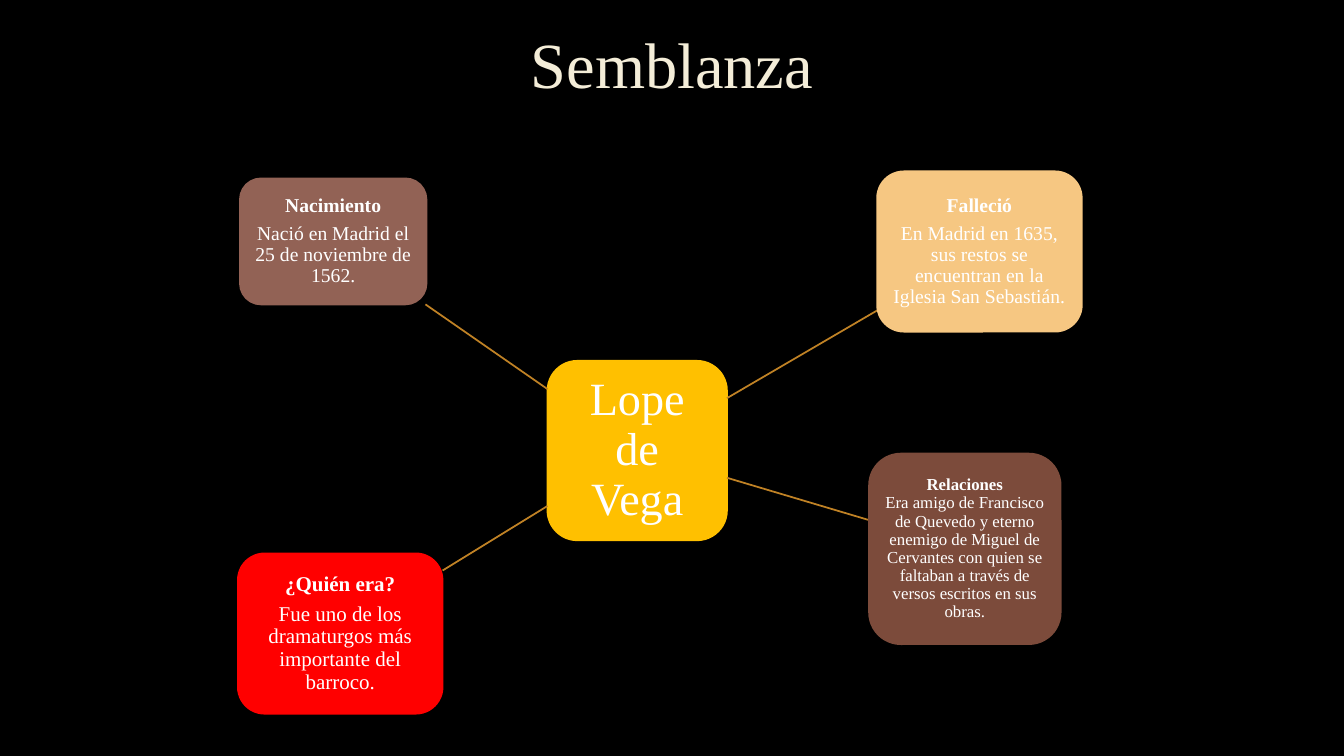
from copy import deepcopy
from lxml import etree
from pptx import Presentation
from pptx.dml.color import RGBColor
from pptx.enum.shapes import MSO_CONNECTOR, MSO_SHAPE
from pptx.enum.text import MSO_ANCHOR, PP_ALIGN
from pptx.oxml import parse_xml
from pptx.oxml.ns import nsdecls, qn
from pptx.util import Inches, Pt

BLACK = RGBColor(0x00, 0x00, 0x00)
CREAM = RGBColor(0xF4, 0xED, 0xD8)
WHITE = RGBColor(0xFF, 0xFF, 0xFF)
GOLD = RGBColor(0xFF, 0xC0, 0x00)
OCHRE = RGBColor(0xC0, 0x82, 0x25)
BROWN = RGBColor(0x7C, 0x4B, 0x3B)
RED = RGBColor(0xFF, 0x00, 0x00)
ROSEWOOD = RGBColor(0x92, 0x62, 0x55)
SAND = RGBColor(0xF6, 0xC7, 0x82)


def write(frame, text_lines, size, color, margin):
    frame.word_wrap = True
    frame.vertical_anchor = MSO_ANCHOR.MIDDLE
    frame.margin_left = frame.margin_right = Inches(margin)
    frame.margin_top = frame.margin_bottom = Inches(margin)
    for index, line in enumerate(text_lines):
        paragraph = frame.add_paragraph() if index else frame.paragraphs[0]
        paragraph.text = line
        paragraph.alignment = PP_ALIGN.CENTER
        paragraph.line_spacing = 0.9
        paragraph.space_after = Pt(round(size * 0.35, 1))
        for run in paragraph.runs:
            run.font.name = "Times New Roman"
            run.font.size = Pt(size)
            run.font.color.rgb = color


def add_box(left, top, width, height, color, text_lines, size, margin):
    box = slide.shapes.add_shape(MSO_SHAPE.ROUNDED_RECTANGLE, Inches(left),
                                 Inches(top), Inches(width), Inches(height))
    box.shadow.inherit = False
    box.fill.solid()
    box.fill.fore_color.rgb = color
    box.line.color.rgb = color
    box.line.width = Pt(1.25)
    write(box.text_frame, text_lines, size, WHITE, margin)
    return box.text_frame


prs = Presentation()
prs.slide_width, prs.slide_height = Inches(13.33), Inches(7.5)
slide = prs.slides.add_slide(prs.slide_layouts[6])
slide.background.fill.solid()
slide.background.fill.fore_color.rgb = BLACK

heading = slide.shapes.add_textbox(0, 0, Inches(13.33), Inches(1.35)).text_frame
write(heading, ["Semblanza"], 46, CREAM, 0.05)
heading.paragraphs[0].space_after = Pt(0)
heading.paragraphs[0].runs[0].font._element.insert(0, parse_xml(
    f'<a:ln {nsdecls("a")} w="9525"><a:solidFill><a:srgbClr val="404040">'
    '<a:alpha val="10000"/></a:srgbClr></a:solidFill></a:ln>'))

add_box(5.43, 3.58, 1.78, 1.78, GOLD, ["Lope de Vega"], 33, 0.09)

facts = [
    ((7.21, 4.74, 8.62, 5.16), (8.62, 4.5, 1.9, 1.89), BROWN, 12, 0.03,
     ["Relaciones\nEra amigo de Francisco de Quevedo y eterno enemigo de Miguel "
      "de Cervantes con quien se faltaban a través de versos escritos en sus obras."]),
    ((5.43, 5.02, 4.39, 5.66), (2.36, 5.49, 2.03, 1.59), RED, 15, 0.04,
     ["¿Quién era?", "Fue uno de los dramaturgos más importante del barroco."]),
    ((5.43, 3.86, 4.22, 3.02), (2.38, 1.77, 1.85, 1.25), ROSEWOOD, 14, 0.04,
     ["Nacimiento", "Nació en Madrid el 25 de noviembre de 1562."]),
    ((7.21, 3.95, 8.7, 3.08), (8.7, 1.7, 2.03, 1.59), SAND, 14, 0.04,
     ["Falleció", "En Madrid en 1635, sus restos se encuentran en la Iglesia San Sebastián."]),
]
for ends, bounds, color, size, margin, text_lines in facts:
    branch = slide.shapes.add_connector(MSO_CONNECTOR.STRAIGHT, *map(Inches, ends))
    branch.line.color.rgb = OCHRE
    branch.line.width = Pt(1.25)
    etree.SubElement(branch._element.spPr, qn("a:effectLst"))

    fact = add_box(*bounds, color, text_lines, size, margin)
    label = fact.paragraphs[0].runs[0]
    label.font.bold = True
    for line_break in fact.paragraphs[0]._p.findall(qn("a:br")):
        line_break.append(deepcopy(label.font._element))

prs.save("out.pptx")
